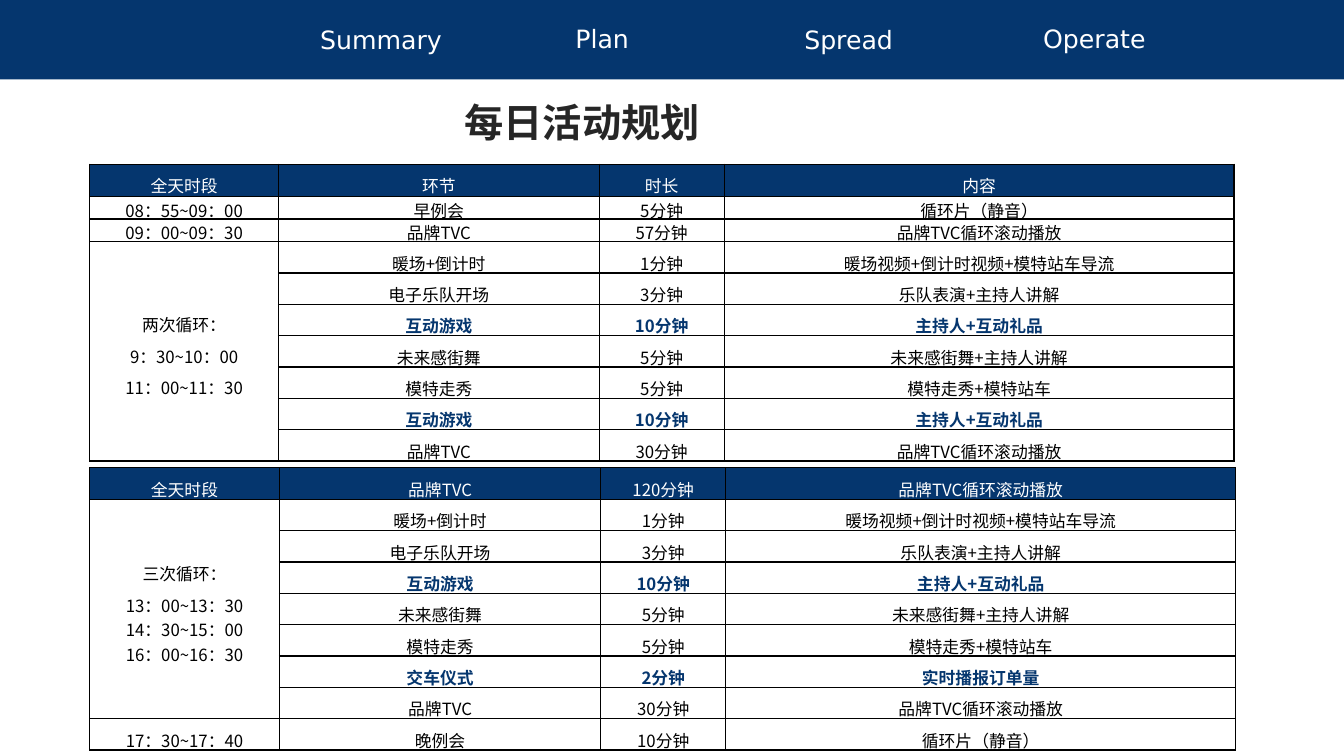
import copy

import lxml.etree
import pptx
import pptx.dml.color
import pptx.enum.shapes
import pptx.enum.text
import pptx.oxml.ns
import pptx.util

Cm = pptx.util.Cm
Pt = pptx.util.Pt
qn = pptx.oxml.ns.qn
NAVY = pptx.dml.color.RGBColor(0x05, 0x36, 0x6E)
WHITE = pptx.dml.color.RGBColor(0xFF, 0xFF, 0xFF)
BLACK = pptx.dml.color.RGBColor(0x00, 0x00, 0x00)
DARK = pptx.dml.color.RGBColor(0x26, 0x26, 0x26)
SANS = "DejaVu Sans"
HAN = "Noto Sans CJK SC"

TABS = [("Summary", 7.82, 0.48, 4.22), ("Plan", 14.25, 0.46, 3.63),
        ("Spread", 20.02, 0.48, 3.38), ("Operate", 26.04, 0.46, 4.27)]
LOOP = "品牌TVC循环滚动播放"
GAME = ("互动游戏", "10分钟", "主持人+互动礼品")
ORDER = ("交车仪式", "2分钟", "实时播报订单量")
KEYS = (GAME[0], ORDER[0])


def cycle(times, event):
    """Return the seven rows of one activity cycle."""
    return [
        (times, "暖场+倒计时", "1分钟", "暖场视频+倒计时视频+模特站车导流"),
        ("", "电子乐队开场", "3分钟", "乐队表演+主持人讲解"),
        ("", *GAME),
        ("", "未来感街舞", "5分钟", "未来感街舞+主持人讲解"),
        ("", "模特走秀", "5分钟", "模特走秀+模特站车"),
        ("", *event),
        ("", "品牌TVC", "30分钟", LOOP),
    ]


MORNING = [
    ("全天时段", "环节", "时长", "内容"),
    ("08：55~09：00", "早例会", "5分钟", "循环片（静音）"),
    ("09：00~09：30", "品牌TVC", "57分钟", LOOP),
    *cycle("两次循环：\n9：30~10：00\n11：00~11：30", GAME),
]
LATER = [
    ("全天时段", "品牌TVC", "120分钟", LOOP),
    *cycle("三次循环：\n13：00~13：30\v14：30~15：00\v16：00~16：30", ORDER),
    ("17：30~17：40", "晚例会", "10分钟", "循环片（静音）"),
]


def style(para, font, size, color, bold=False):
    """Format the runs and line breaks of a paragraph."""
    for run in para.runs:
        run.font.name = font
        run.font.size = Pt(size)
        run.font.bold = bold
        run.font.color.rgb = color
        props = run._r.get_or_add_rPr()
        face = lxml.etree.SubElement(props, qn("a:ea"))
        face.set("typeface", font)
        for mark in para._p.findall(qn("a:br")):
            if len(mark) == 0:
                mark.append(copy.deepcopy(props))


def label(slide, text, box, font, size, color, bold=False):
    """Add a text box with one line of text."""
    frame = slide.shapes.add_textbox(*map(Cm, box)).text_frame
    frame.word_wrap = True
    frame.auto_size = pptx.enum.text.MSO_AUTO_SIZE.SHAPE_TO_FIT_TEXT
    frame.text = text
    style(frame.paragraphs[0], font, size, color, bold)


def banner(slide):
    """Add the navy bar with its tab names."""
    bar = slide.shapes.add_shape(pptx.enum.shapes.MSO_SHAPE.RECTANGLE,
                                 0, 0, Cm(33.87), Cm(2))
    bar.shadow.inherit = False
    bar.fill.solid()
    bar.fill.fore_color.rgb = NAVY
    bar.line.fill.background()
    for text, left, top, width in TABS:
        label(slide, text, (left, top, width, 1.02), SANS, 18, WHITE)


def border(cell):
    """Draw a thin black line on each side of a cell."""
    props = cell._tc.get_or_add_tcPr()
    for side in ("a:lnL", "a:lnR", "a:lnT", "a:lnB"):
        line = lxml.etree.SubElement(props, qn(side), w=str(Pt(1)))
        fill = lxml.etree.SubElement(line, qn("a:solidFill"))
        lxml.etree.SubElement(fill, qn("a:srgbClr"), val=str(BLACK))


def fill_cell(cell, text, inset, color, bold, head):
    """Write and format one table cell."""
    border(cell)
    if head:
        cell.fill.solid()
        cell.fill.fore_color.rgb = NAVY
    else:
        cell.fill.background()
    cell.vertical_anchor = pptx.enum.text.MSO_ANCHOR.MIDDLE
    cell.margin_left = cell.margin_right = cell.margin_bottom = 0
    cell.margin_top = Cm(inset)
    cell.text_frame.text = text
    for num, para in enumerate(cell.text_frame.paragraphs):
        para.alignment = pptx.enum.text.PP_ALIGN.CENTER
        para.space_before = Pt(5.2 if num else 0)
        style(para, HAN, 12, color, bold)


def schedule(slide, rows, top, widths, heights, start):
    """Add a timetable whose cycle of seven rows begins at start."""
    frame = slide.shapes.add_table(len(rows), len(widths), Cm(2.26), Cm(top),
                                   Cm(sum(widths)), Cm(sum(heights)))
    table = frame.table
    table.first_row = table.horz_banding = False
    for col, width in zip(table.columns, widths):
        col.width = Cm(width)
    for row, height in zip(table.rows, heights):
        row.height = Cm(height)
    for i, row in enumerate(rows):
        head = i == 0
        inset = 0.23 if heights[i] > 0.6 else 0.03
        for j, text in enumerate(row):
            bold = j > 0 and row[1] in KEYS
            color = WHITE if head else NAVY if bold else BLACK
            fill_cell(table.cell(i, j), text, inset, color, bold, head)
    table.cell(start, 0).merge(table.cell(start + 6, 0))


def main():
    """Build the daily activity slide."""
    deck = pptx.Presentation()
    deck.slide_width, deck.slide_height = Cm(33.87), Cm(19.05)
    slide = deck.slides.add_slide(deck.slide_layouts[6])
    banner(slide)
    schedule(slide, MORNING, 4.14, (4.76, 8.08, 3.15, 12.85),
             [0.81, 0.57, 0.57] + [0.79] * 7, 3)
    schedule(slide, LATER, 11.79, (4.78, 8.1, 3.15, 12.85), [0.79] * 9, 1)
    label(slide, "每日活动规划", (11.46, 2.36, 16.94, 1.45), HAN, 28, DARK, True)
    deck.save("out.pptx")


if __name__ == "__main__":
    main()
